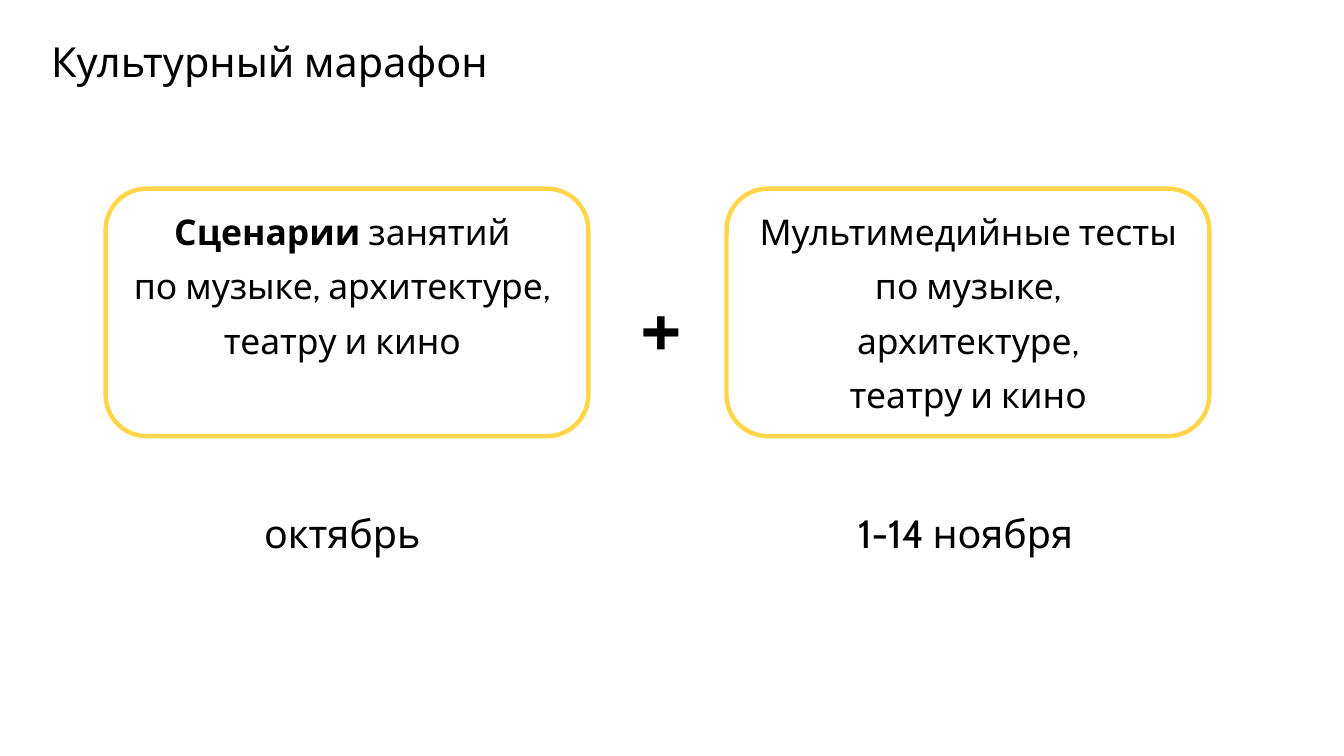
"""Build the culture marathon slide: two outlined cards joined by a plus, with dates below."""
from dataclasses import dataclass

from lxml.etree import SubElement
from pptx import Presentation
from pptx.dml.color import RGBColor
from pptx.enum.shapes import MSO_SHAPE as Shape
from pptx.enum.text import MSO_ANCHOR as Anchor, MSO_AUTO_SIZE as AutoSize, PP_ALIGN as Align
from pptx.oxml.ns import qn
from pptx.util import Inches, Pt

BLACK = RGBColor(0x00, 0x00, 0x00)
YELLOW = RGBColor(0xFF, 0xD6, 0x49)
FONT = "Cabin"
WIDTH, HEIGHT = Inches(18.96), Inches(10.66)
COLUMN, ROW = WIDTH / 100, HEIGHT / 100


@dataclass(frozen=True)
class Area:
    """A rectangle in hundredths of the slide's width and height."""

    left: float
    top: float
    width: float
    height: float

    def bounds(self) -> tuple[int, int, int, int]:
        """Return the rectangle as left, top, width and height in EMU."""
        return (round(self.left * COLUMN), round(self.top * ROW),
                round(self.width * COLUMN), round(self.height * ROW))


@dataclass(frozen=True)
class Span:
    """A stretch of text in one weight."""

    text: str
    bold: bool = False


@dataclass(frozen=True)
class Stage:
    """One stage of the marathon: its card, its date and their places."""

    frame_left: float
    text_left: float
    date_left: float
    lines: tuple[tuple[Span, ...], ...]
    date: str
    text_index: int
    date_index: int


STAGES = (
    Stage(7.86, 7.28, 7.28,
          ((Span("Сценарии ", True), Span("занятий")),
           (Span("по музыке, архитектуре,"),),
           (Span("театру и кино"),)),
          "октябрь", 2, 1),
    Stage(54.06, 53.85, 53.64,
          ((Span("Мультимедийные тесты"),),
           (Span("по музыке,"),),
           (Span("архитектуре,"),),
           (Span("театру и кино"),)),
          "1-14 ноября", 4, 3),
)


def place(box, area: Area, anchor: Anchor) -> None:
    """Move a text box or placeholder and fix how it holds its text."""
    box.left, box.top, box.width, box.height = area.bounds()
    frame = box.text_frame
    frame.word_wrap = True
    frame.auto_size = AutoSize.NONE
    frame.vertical_anchor = anchor


def add_spans(para, spans: tuple[Span, ...], size: int) -> None:
    """Add the spans to a paragraph as runs."""
    for span in spans:
        run = para.add_run()
        run.text = span.text
        run.font.name = FONT
        run.font.size = Pt(size)
        run.font.bold = span.bold
        run.font.color.rgb = BLACK


def fill_body(box, area: Area, lines: tuple[tuple[Span, ...], ...], size: int) -> None:
    """Fill a body placeholder with centred lines without bullets."""
    place(box, area, Anchor.TOP)
    frame = box.text_frame
    for number, spans in enumerate(lines):
        para = frame.add_paragraph() if number else frame.paragraphs[0]
        para.alignment = Align.CENTER
        para.space_before = para.space_after = Pt(6)
        properties = para._p.get_or_add_pPr()
        properties.set("marL", "0")
        properties.set("indent", "0")
        SubElement(properties, qn("a:buNone"))
        add_spans(para, spans, size)


def add_title(page, text: str) -> None:
    """Set the slide's title at the top left."""
    box = page.shapes.title
    place(box, Area(3.8, 3.19, 92.41, 10.32), Anchor.TOP)
    frame = box.text_frame
    frame.margin_left = frame.margin_bottom = 0
    frame.margin_top, frame.margin_right = Inches(0.2), Inches(0.79)
    para = frame.paragraphs[0]
    para.alignment = Align.LEFT
    para.line_spacing = Pt(48)
    add_spans(para, (Span(text),), 42)


def add_stage(page, stage: Stage) -> None:
    """Draw a stage's outlined card with its text and its date."""
    card = page.shapes.add_shape(
        Shape.ROUNDED_RECTANGLE, *Area(stage.frame_left, 24.95, 35.92, 32.74).bounds())
    card.shadow.inherit = False
    card.fill.background()
    card.line.color.rgb = YELLOW
    card.line.width = Pt(4.5)
    bodies = {box.placeholder_format.idx: box for box in page.placeholders}
    fill_body(bodies[stage.text_index], Area(stage.text_left, 27.3, 36.39, 24.95),
              stage.lines, 36)
    fill_body(bodies[stage.date_index], Area(stage.date_left, 66.89, 36.39, 24.95),
              ((Span(stage.date),),), 40)


def add_plus(page) -> None:
    """Place the plus sign between the cards."""
    area = Area(46.1, 34.43, 6.17, 16.14)
    box = page.shapes.add_textbox(*area.bounds())
    place(box, area, Anchor.MIDDLE)
    para = box.text_frame.paragraphs[0]
    para.alignment = Align.CENTER
    add_spans(para, (Span("+"),), 96)


def main() -> None:
    """Build the deck and save it."""
    deck = Presentation()
    deck.slide_width, deck.slide_height = WIDTH, HEIGHT
    page = deck.slides.add_slide(deck.slide_layouts.get_by_name("Comparison"))
    add_title(page, "Культурный марафон")
    for stage in STAGES:
        add_stage(page, stage)
    add_plus(page)
    deck.save("out.pptx")


if __name__ == "__main__":
    main()
